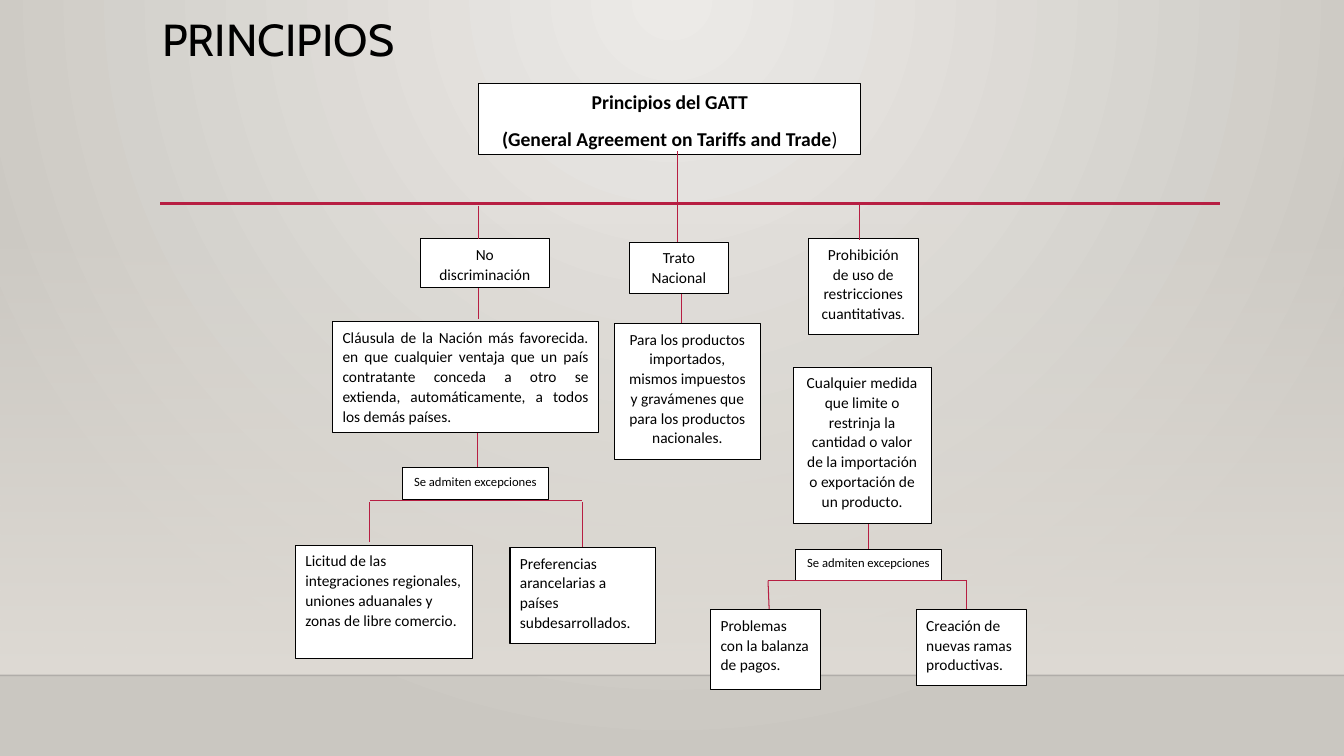
"""Build the slide with the chart of GATT principles."""
from dataclasses import dataclass

from lxml import etree
from pptx import Presentation
from pptx.dml.color import RGBColor
from pptx.enum.shapes import MSO_CONNECTOR, MSO_SHAPE
from pptx.enum.text import MSO_ANCHOR, PP_ALIGN
from pptx.oxml.ns import qn
from pptx.util import Pt

WIDTH, HEIGHT, FLOOR = 960, 540, 482.4
COLORS = {
    "red": "B71E42", "black": "000000", "white": "FFFFFF", "edge": "000001",
    "light": "ECEAE7", "dark": "CAC7C1", "wall": "DFDBD5",
}


@dataclass
class Box:
    left: float
    top: float
    width: float
    height: float
    text: str
    align: PP_ALIGN = PP_ALIGN.CENTER
    size: float = 11
    border: float = 0.5
    bold: bool = False
    tail: str = ""
    tail_size: float = 11


@dataclass
class Line:
    x1: float
    y1: float
    x2: float
    y2: float
    weight: float = 0.75
    color: str = "red"


LEFT, JUST = PP_ALIGN.LEFT, PP_ALIGN.JUSTIFY
BARS = [
    Line(114.5, 145.4, 871.2, 145.4, 2.5),
    Line(341.3, 294.5, 341.3, 334.1),
    Line(264.2, 357.8, 415.4, 357.8),
    Line(264.2, 358.6, 264.2, 387.4),
    Line(342, 204.5, 342, 228.2),
    Line(486.7, 209.5, 486.7, 233.3),
    Line(341.3, 145.4, 614.2, 145.4),
    Line(620.6, 373, 620.6, 412.6),
]
BOXES = [
    Box(342, 59.8, 272.9, 50.4,
        "Principios del GATT\n(General Agreement on Tariffs and Trade",
        size=14, border=0.75, bold=True, tail=")", tail_size=14),
    Box(300.2, 170.6, 92.2, 34.6, "No discriminación"),
    Box(449.3, 172.8, 71.3, 36.7, "Trato Nacional"),
    Box(577.4, 170.6, 78.5, 68.4,
        "Prohibición de uso de restricciones cuantitativas",
        tail=".", tail_size=10),
    Box(237.6, 229.7, 190.1, 79.2,
        "Cláusula de la Nación más favorecida. en que cualquier ventaja que "
        "un país contratante conceda a otro se extienda, automáticamente, "
        "a todos los demás países.", JUST),
    Box(439.2, 231.1, 103.7, 97.2,
        "Para los productos importados, mismos impuestos y gravámenes que "
        "para los productos nacionales."),
    Box(566.6, 262.1, 98.6, 111.6,
        "Cualquier medida que limite o restrinja la cantidad o valor de la "
        "importación o exportación de un producto."),
    *(Box(x, y, 104.4, 22.3, "Se admiten excepciones", size=9)
      for x, y in ((287.3, 334.1), (568.1, 392.4))),
    Box(211, 389.5, 126.7, 80.6,
        "Licitud de las integraciones regionales, uniones aduanales y zonas "
        "de libre comercio.", LEFT, border=0.75),
    Box(364.3, 391, 103.7, 68.4,
        "Preferencias arancelarias a países subdesarrollados.", LEFT,
        border=0.75),
    Box(507.6, 435.6, 78.5, 56.9, "Problemas con la balanza de pagos.", LEFT),
    Box(654.5, 435.6, 78.5, 54, "Creación de nuevas ramas productivas.", LEFT),
]
LINKS = [
    Line(483.8, 108, 483.8, 147.6),
    Line(342, 146.9, 342, 170.6),
    Line(483.8, 147.6, 483.8, 172.8),
    Line(614.2, 145.4, 614.2, 171.4),
    Line(548.6, 414.7, 690.5, 414.7),
    Line(548.6, 414.7, 549.4, 434.9),
    Line(690.5, 414.7, 690.5, 434.9),
    Line(416.2, 358.6, 416.2, 391),
]


def tint(name: str) -> RGBColor:
    """Return a named colour."""
    return RGBColor.from_string(COLORS[name])


def fade(node, amount: int) -> None:
    """Give the first colour in a node its opacity in percent."""
    color = next(node.iter(qn("a:srgbClr")))
    etree.SubElement(color, qn("a:alpha"), val=str(amount * 1000))


def blend(fill, first: str, last: str) -> None:
    """Set a fill to a gradient of two colours."""
    fill.gradient()
    for stop, name, place in zip(fill.gradient_stops, (first, last), (0, 1)):
        stop.color.rgb = tint(name)
        stop.position = place


def draw_line(slide, line: Line):
    """Draw a straight line and return it."""
    link = slide.shapes.add_connector(
        MSO_CONNECTOR.STRAIGHT,
        Pt(line.x1), Pt(line.y1), Pt(line.x2), Pt(line.y2))
    link.line.color.rgb = tint(line.color)
    link.line.width = Pt(line.weight)
    etree.SubElement(link._element.spPr, qn("a:effectLst"))
    return link


def style(run, size: float, face: str, bold: bool = False) -> None:
    """Set the font of a run."""
    run.font.size, run.font.name, run.font.bold = Pt(size), face, bold
    run.font.color.rgb = tint("black")


def draw_box(slide, box: Box) -> None:
    """Draw a white box with its text."""
    shape = slide.shapes.add_shape(
        MSO_SHAPE.RECTANGLE,
        Pt(box.left), Pt(box.top), Pt(box.width), Pt(box.height))
    shape.shadow.inherit = False
    shape.fill.solid()
    shape.fill.fore_color.rgb = tint("white")
    shape.line.color.rgb = tint("black")
    shape.line.width = Pt(box.border)
    frame = shape.text_frame
    frame.word_wrap = True
    frame.vertical_anchor = MSO_ANCHOR.TOP
    frame.text = box.text
    for para in frame.paragraphs:
        para.alignment = box.align
        para.line_spacing = 1.07
        para.space_after = Pt(8)
        style(para.runs[0], box.size, "Calibri", box.bold)
    if box.tail:
        run = frame.paragraphs[-1].add_run()
        run.text = box.tail
        style(run, box.tail_size, "Calibri")


def draw_back(slide) -> None:
    """Draw the background, the wall and the floor edge."""
    fill = slide.background.fill
    blend(fill, "light", "dark")
    slant = next(slide._element.iter(qn("a:lin")))
    path = etree.Element(qn("a:path"), path="circle")
    etree.SubElement(path, qn("a:fillToRect"),
                     l="43000", t="0", r="43000", b="100000")
    slant.getparent().replace(slant, path)
    wall = slide.shapes.add_shape(
        MSO_SHAPE.RECTANGLE, Pt(0), Pt(159.1), Pt(WIDTH), Pt(FLOOR - 159.1))
    wall.shadow.inherit = False
    wall.line.fill.background()
    blend(wall.fill, "wall", "wall")
    wall.fill.gradient_angle = 270
    fade(wall._element.spPr, 0)
    edge = draw_line(slide, Line(0, FLOOR, WIDTH, FLOOR, 1, "edge"))
    fade(edge._element.spPr, 20)


def draw_title(slide) -> None:
    """Write the slide title."""
    frame = slide.shapes.add_textbox(
        Pt(108.7), Pt(9.4), Pt(756), Pt(82.8)).text_frame
    frame.word_wrap = True
    frame.text = "PRINCIPIOS"
    frame.paragraphs[0].line_spacing = 0.9
    style(frame.paragraphs[0].runs[0], 32, "Cabin")


def main() -> None:
    """Build and save the slide."""
    deck = Presentation()
    deck.slide_width, deck.slide_height = Pt(WIDTH), Pt(HEIGHT)
    slide = deck.slides.add_slide(deck.slide_layouts[6])
    draw_back(slide)
    draw_title(slide)
    for bar in BARS:
        draw_line(slide, bar)
    for box in BOXES:
        draw_box(slide, box)
    for link in LINKS:
        draw_line(slide, link)
    deck.save("out.pptx")


if __name__ == "__main__":
    main()
